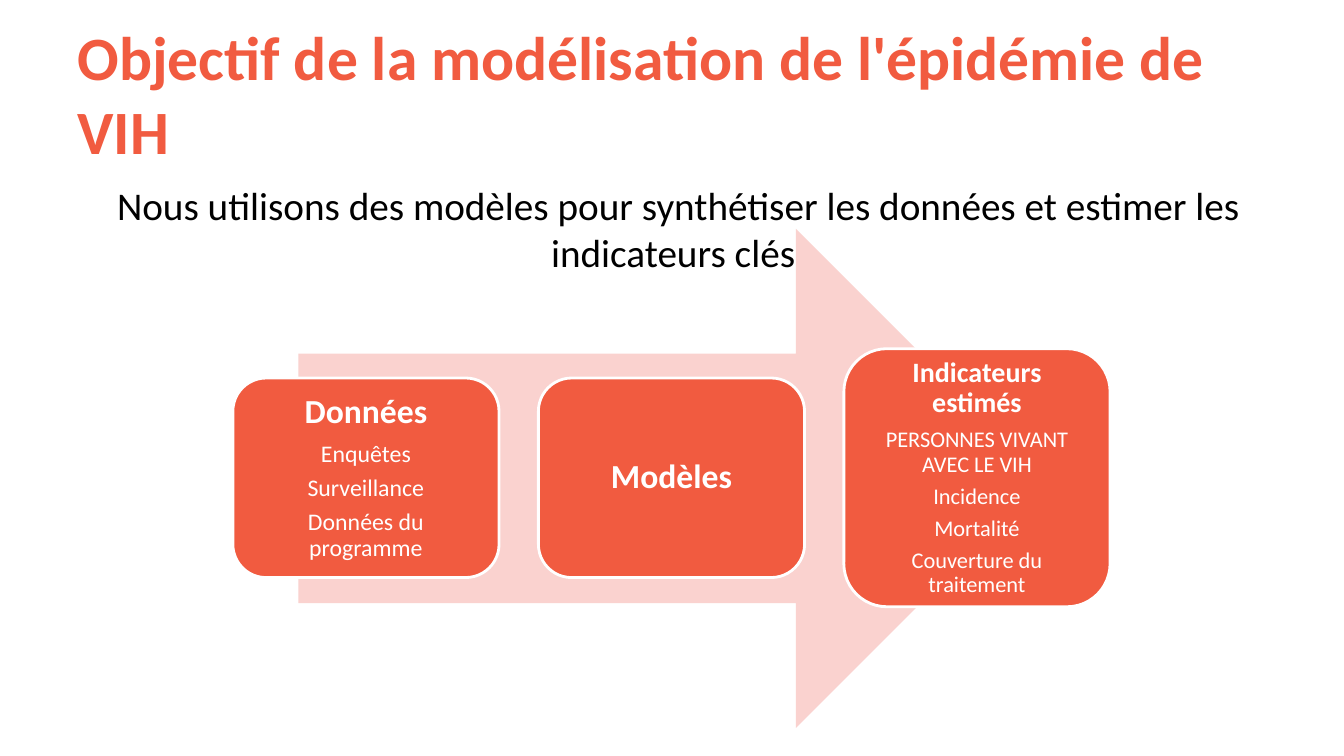
import pptx
import pptx.util
import pptx.dml.color
import pptx.enum.shapes
import pptx.enum.text
from dataclasses import dataclass

Inches = pptx.util.Inches
Pt = pptx.util.Pt
RGBColor = pptx.dml.color.RGBColor
MSO_SHAPE = pptx.enum.shapes.MSO_SHAPE
MSO_ANCHOR = pptx.enum.text.MSO_ANCHOR
PP_ALIGN = pptx.enum.text.PP_ALIGN


@dataclass(frozen=True)
class Theme:
    font: str = "Calibri"
    accent: RGBColor = RGBColor.from_string("F15B40")
    arrow: RGBColor = RGBColor.from_string("FAD2CF")
    white: RGBColor = RGBColor.from_string("FFFFFF")
    black: RGBColor = RGBColor.from_string("000000")
    title_size: int = 44
    intro_size: int = 28


theme = Theme()


def format_paragraph(paragraph, size, color, bold=False, alignment=PP_ALIGN.CENTER):
    paragraph.alignment = alignment
    for run in paragraph.runs:
        run.font.name = theme.font
        run.font.size = Pt(size)
        run.font.bold = bold
        run.font.color.rgb = color


def add_filled_shape(preset, left, top, width, height, color):
    shape = slide.shapes.add_shape(preset, Inches(left), Inches(top), Inches(width), Inches(height))
    shape.shadow.inherit = False
    shape.fill.solid()
    shape.fill.fore_color.rgb = color
    shape.line.fill.background()
    return shape


presentation = pptx.Presentation()
presentation.slide_width = Inches(13.33)
presentation.slide_height = Inches(7.5)
slide = presentation.slides.add_slide(presentation.slide_layouts[6])

title = slide.shapes.add_textbox(Inches(0.67), Inches(0.3), Inches(12), Inches(1.25))
title.text_frame.word_wrap = True
title.text_frame.vertical_anchor = MSO_ANCHOR.MIDDLE
title.text_frame.text = "Objectif de la modélisation de l'épidémie de VIH"
format_paragraph(title.text_frame.paragraphs[0], theme.title_size, theme.accent, True, PP_ALIGN.LEFT)

intro = slide.shapes.add_textbox(Inches(0.67), Inches(1.75), Inches(12.11), Inches(4.95))
intro.text_frame.word_wrap = True
intro.text_frame.text = "Nous utilisons des modèles pour synthétiser les données et estimer les indicateurs clés."
intro_paragraph = intro.text_frame.paragraphs[0]
format_paragraph(intro_paragraph, theme.intro_size, theme.black)
intro_paragraph.space_before = Pt(0.2 * theme.intro_size)

add_filled_shape(MSO_SHAPE.RIGHT_ARROW, 2.96, 2.27, 7.41, 4.95, theme.arrow)

steps = [
    (1.98, 0.1, 24, 17, ["Données", "Enquêtes", "Surveillance", "Données du programme"]),
    (1.98, 0.1, 24, 17, ["Modèles"]),
    (2.56, 0.08, 20, 16, ["Indicateurs estimés", "PERSONNES VIVANT AVEC LE VIH",
                          "Incidence", "Mortalité", "Couverture du traitement"]),
]
first_left, step_pitch, step_width, step_middle = 2.31, 3.03, 2.64, 4.74

for index, (height, inset, heading_size, item_size, lines) in enumerate(steps):
    box = add_filled_shape(MSO_SHAPE.ROUNDED_RECTANGLE, first_left + index * step_pitch,
                           step_middle - height / 2, step_width, height, theme.accent)
    box.line.color.rgb = theme.white
    box.line.width = Pt(2)
    frame = box.text_frame
    frame.word_wrap = True
    frame.vertical_anchor = MSO_ANCHOR.MIDDLE
    frame.margin_left = frame.margin_right = Inches(inset)
    frame.margin_top = frame.margin_bottom = Inches(inset)
    frame.text = "\n".join(lines)
    for position, paragraph in enumerate(frame.paragraphs):
        size = heading_size if position == 0 else item_size
        format_paragraph(paragraph, size, theme.white, position == 0)
        paragraph.line_spacing = 0.9
        paragraph.space_after = Pt(0.35 * size)

presentation.save("out.pptx")
